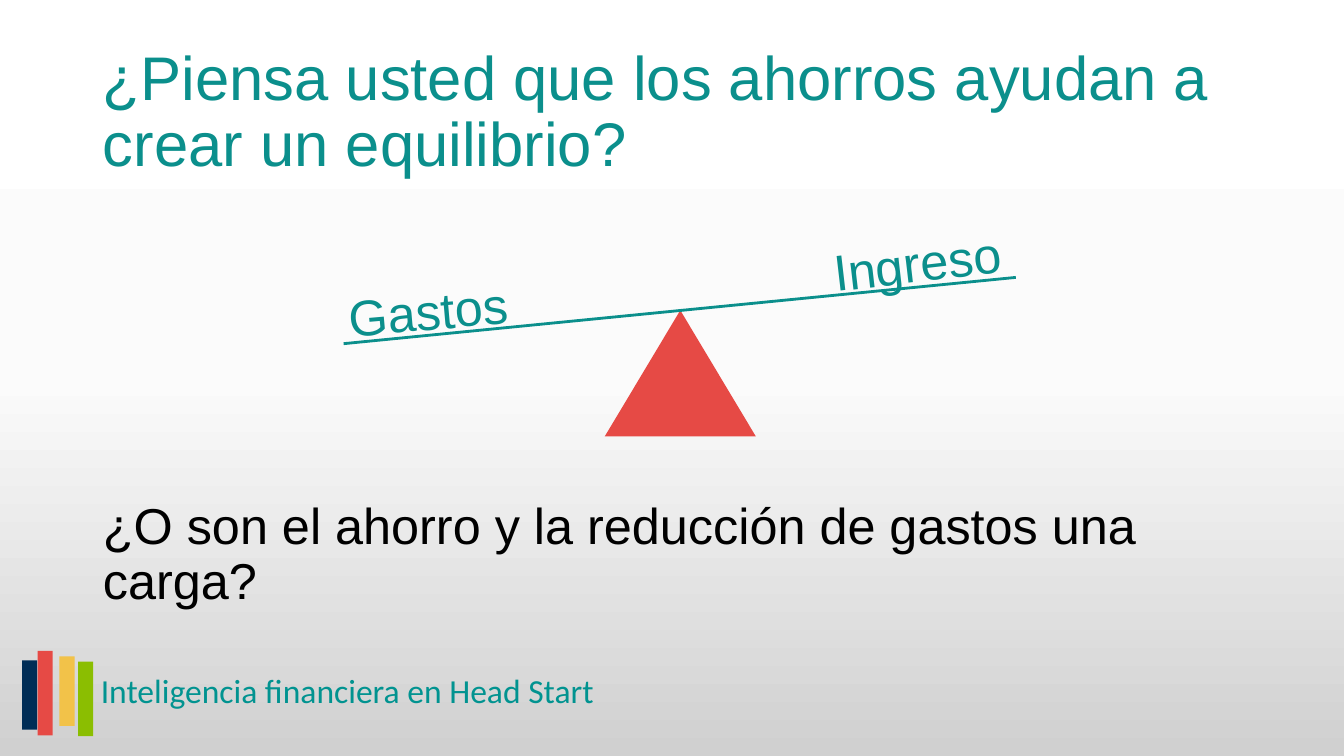
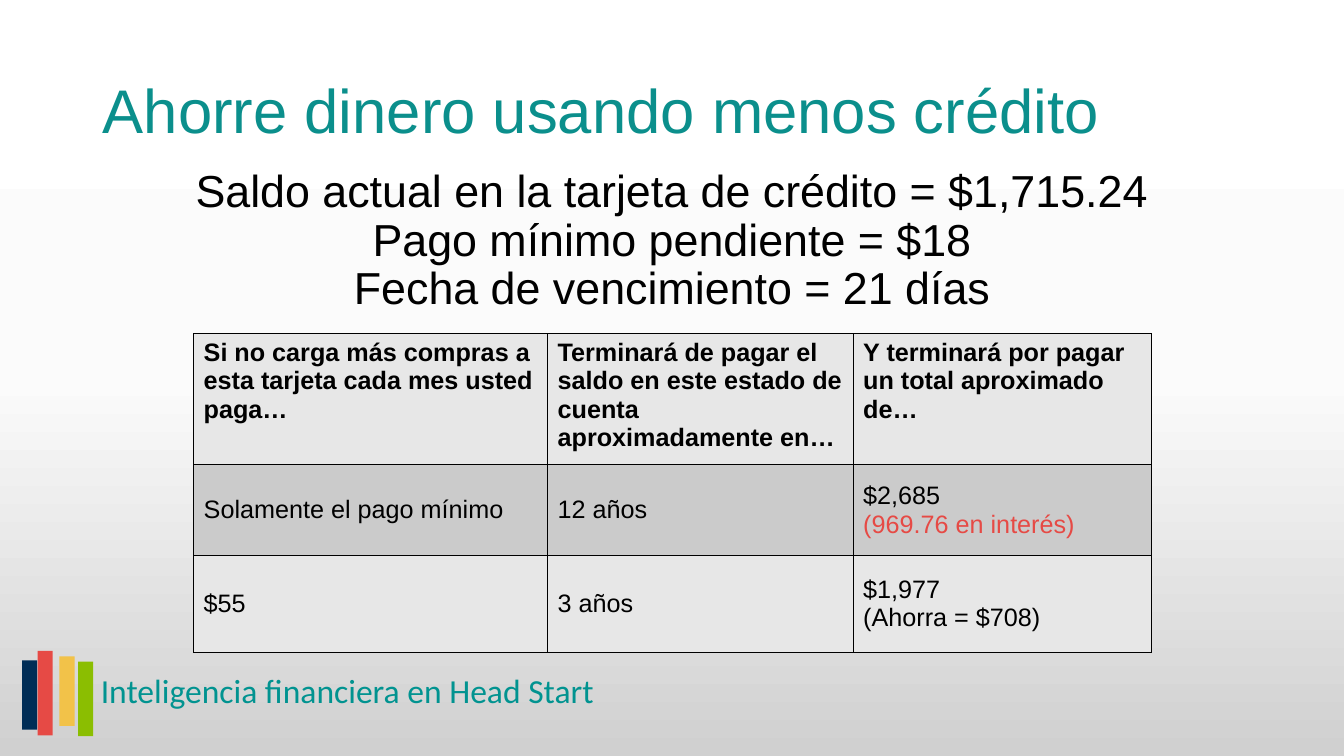
from copy import deepcopy

from lxml import etree
from pptx import Presentation
from pptx.dml.color import RGBColor
from pptx.enum import shapes, text
from pptx.oxml import ns
from pptx.util import Cm, Pt

TEAL = RGBColor(0x0B, 0x8F, 0x8C)
FOOTER_TEAL = RGBColor(0x01, 0x93, 0x90)
RED = RGBColor(0xE6, 0x4A, 0x45)
YELLOW = RGBColor(0xF2, 0xC2, 0x49)
GREEN = RGBColor(0x8B, 0xBE, 0x01)
NAVY = RGBColor(0x00, 0x2D, 0x56)
BLACK = RGBColor(0, 0, 0)
WHITE = RGBColor(0xFF, 0xFF, 0xFF)
NEAR_WHITE = RGBColor(0xFB, 0xFB, 0xFB)
SILVER = RGBColor(0xD0, 0xD0, 0xD0)
LIGHT_ROW = RGBColor(0xE7, 0xE7, 0xE7)
DARK_ROW = RGBColor(0xCB, 0xCB, 0xCB)

TITLE = {"size": 44, "color": TEAL, "line_spacing": 0.9}
BODY = {"size": 36, "line_spacing": 0.9}
SCALE_LABEL = {"size": 36, "color": TEAL, "alignment": text.PP_ALIGN.CENTER}


def write(frame, lines, size, color=BLACK, name="Arial", bold=False, **paragraph_format):
    """Fill a text frame with one unbulleted paragraph per line."""
    frame.auto_size = text.MSO_AUTO_SIZE.NONE
    for number, line in enumerate(lines):
        paragraph = frame.paragraphs[0] if number == 0 else frame.add_paragraph()
        properties = paragraph._p.get_or_add_pPr()
        properties.set("marL", "0")
        properties.set("indent", "0")
        etree.SubElement(properties, ns.qn("a:buNone"))
        paragraph.space_before = Pt(0)
        for key, value in paragraph_format.items():
            setattr(paragraph, key, value)
        run = paragraph.add_run()
        run.text = line
        for key, value in {"size": Pt(size), "name": name, "bold": bold}.items():
            setattr(run.font, key, value)
        run.font.color.rgb = color


def add_block(slide, kind, box, color):
    block = slide.shapes.add_shape(kind, *map(Cm, box))
    block.shadow.inherit = False
    block.fill.solid()
    block.fill.fore_color.rgb = color
    block.line.fill.background()
    return block


prs = Presentation()
prs.slide_width, prs.slide_height = Cm(33.87), Cm(19.05)

# Shared background, title position and footer
master = prs.slide_master
background = master.background.fill
background.gradient()
background.gradient_angle = 270
stop_list = master.element.find(".//" + ns.qn("a:gsLst"))
stop_list.append(deepcopy(stop_list[-1]))
for stop, position, color in zip(
    background.gradient_stops, (0, 0.5, 1), (WHITE, NEAR_WHITE, SILVER)
):
    stop.position = position
    stop.color.rgb = color

title_area = {"left": 2.34, "top": 1.02, "width": 29.21, "height": 3.68}
for key, value in title_area.items():
    setattr(master.placeholders[0], key, Cm(value))

layout = prs.slide_layouts[1]
balance_slide, credit_slide = prs.slides.add_slide(layout), prs.slides.add_slide(layout)

footer_parts = [
    add_block(balance_slide, shapes.MSO_SHAPE.RECTANGLE, (left, top, 0.38, height), color)
    for left, top, height, color in (
        (1.5, 16.54, 1.75, YELLOW),
        (0.95, 16.4, 2.13, RED),
        (1.97, 16.67, 1.88, GREEN),
        (0.56, 16.64, 1.75, NAVY),
    )
]
footer = balance_slide.shapes.add_textbox(Cm(2.44), Cm(16.79), Cm(13.26), Cm(1.88))
footer.text_frame.word_wrap = True
for side in ("left", "top", "right", "bottom"):
    setattr(footer.text_frame, f"margin_{side}", Cm(0.1))
write(footer.text_frame, ["Inteligencia financiera en Head Start"], 24, FOOTER_TEAL, "Calibri")
for part in footer_parts + [footer]:
    master.shapes.element.append(part.element)

# Titles and body texts
for slide, title, lines, top, height, body_format, anchor in (
    (
        balance_slide,
        "¿Piensa usted que los ahorros ayudan a crear un equilibrio?",
        ["¿O son el ahorro y la reducción de gastos una carga?"],
        12.5, 3.81, BODY, text.MSO_ANCHOR.TOP,
    ),
    (
        credit_slide,
        "Ahorre dinero usando menos crédito",
        [
            "Saldo actual en la tarjeta de crédito = $1,715.24",
            "Pago mínimo pendiente = $18",
            "Fecha de vencimiento = 21 días",
        ],
        3.81, 4.57,
        BODY | {"size": 32, "alignment": text.PP_ALIGN.CENTER},
        text.MSO_ANCHOR.MIDDLE,
    ),
):
    heading, body = slide.shapes.title, slide.placeholders[1]
    heading.text_frame.vertical_anchor = text.MSO_ANCHOR.MIDDLE
    write(heading.text_frame, [title], alignment=text.PP_ALIGN.LEFT, **TITLE)
    body_area = title_area | {"top": top, "height": height}
    for key, value in body_area.items():
        setattr(body, key, Cm(value))
    body.text_frame.vertical_anchor = anchor
    write(body.text_frame, lines, **body_format)

# Scale of expenses and income
add_block(balance_slide, shapes.MSO_SHAPE.ISOSCELES_TRIANGLE, (15.24, 7.82, 3.81, 3.18), RED)
beam = balance_slide.shapes.add_connector(
    shapes.MSO_CONNECTOR.STRAIGHT, Cm(8.66), Cm(8.66), Cm(25.6), Cm(6.99)
)
beam.line.color.rgb = TEAL
beam.line.width = Pt(2)
etree.SubElement(beam.element.spPr, ns.qn("a:effectLst"))

for word, box, rotation in (
    ("Gastos", (7.37, 6.93, 6.83, 1.8), 355),
    ("Ingreso", (20.73, 5.72, 4.78, 1.8), 353.4),
):
    label = balance_slide.shapes.add_textbox(*map(Cm, box))
    label.rotation = rotation
    label.text_frame.word_wrap = True
    write(label.text_frame, [word], **SCALE_LABEL)

# Payment comparison
payments = (
    (
        ["Si no carga más compras a esta tarjeta cada mes usted paga…"],
        ["Terminará de pagar el saldo en este estado de cuenta aproximadamente en…"],
        ["Y terminará por pagar un total aproximado de…"],
    ),
    (["Solamente el pago mínimo"], ["12 años"], ["$2,685", "(969.76 en interés)"]),
    (["$55"], ["3 años"], ["$1,977", "(Ahorra = $708)"]),
)
column_widths = (8.92, 7.7, 7.52)
row_heights = (3.3, 2.29, 2.44)
row_fills = (LIGHT_ROW, DARK_ROW, LIGHT_ROW)
table = credit_slide.shapes.add_table(
    3, 3, Cm(4.88), Cm(8.41), Cm(sum(column_widths)), Cm(sum(row_heights))
).table
table.first_row = table.horz_banding = False
for column, width in zip(table.columns, column_widths):
    column.width = Cm(width)

for r, (row, height, fill) in enumerate(zip(table.rows, row_heights, row_fills)):
    row.height = Cm(height)
    for cell, lines in zip(row.cells, payments[r]):
        cell.vertical_anchor = text.MSO_ANCHOR.MIDDLE if r else text.MSO_ANCHOR.TOP
        write(cell.text_frame, lines, 18, bold=r == 0)
        cell_properties = cell._tc.get_or_add_tcPr()
        for edge in ("lnL", "lnR", "lnT", "lnB"):
            border = etree.SubElement(cell_properties, ns.qn(f"a:{edge}"), w=str(Pt(1)))
            border_fill = etree.SubElement(border, ns.qn("a:solidFill"))
            etree.SubElement(border_fill, ns.qn("a:srgbClr"), val=str(BLACK))
        cell.fill.solid()
        cell.fill.fore_color.rgb = fill

interest = table.cell(1, 2).text_frame.paragraphs[1].runs[0]
interest.font.color.rgb = RED

prs.save("out.pptx")
